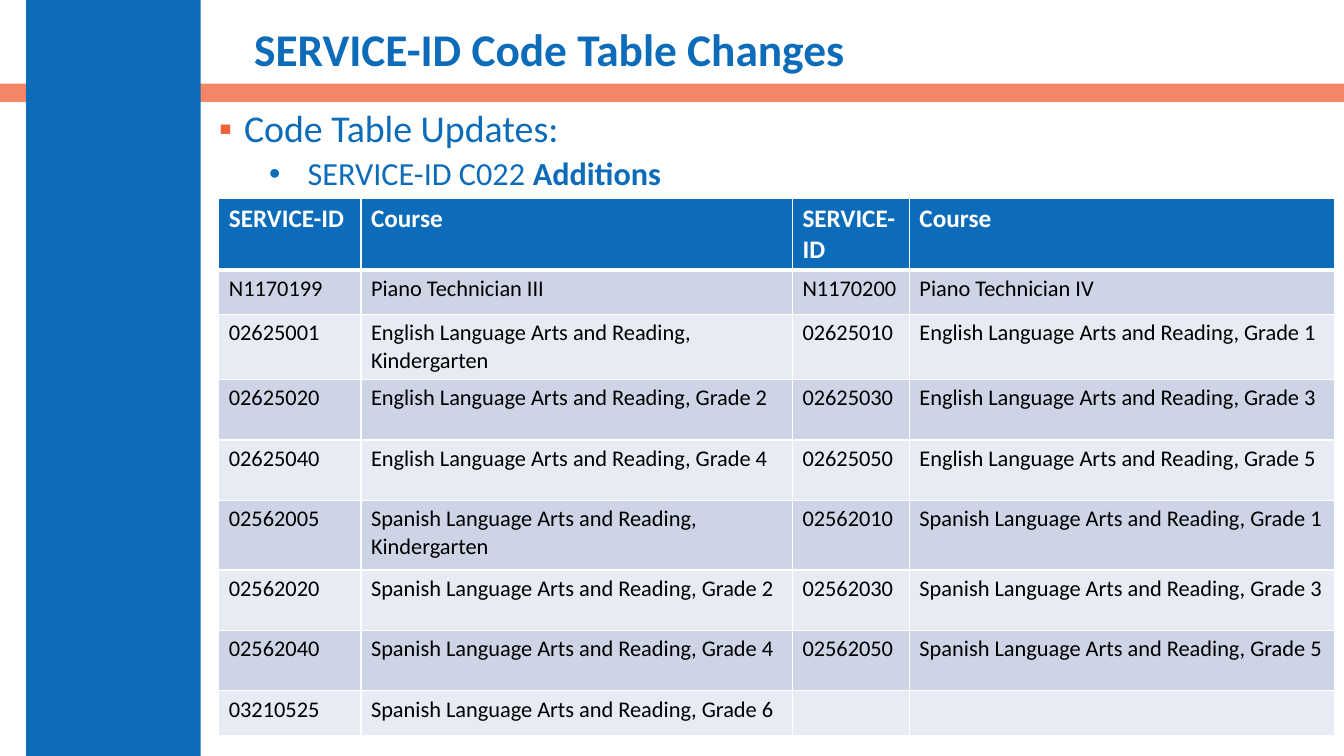
from lxml import etree
from pptx import Presentation
from pptx.dml.color import RGBColor
from pptx.enum.shapes import MSO_SHAPE
from pptx.enum.text import MSO_ANCHOR, MSO_AUTO_SIZE, PP_ALIGN
from pptx.oxml.ns import qn
from pptx.util import Inches, Pt

RECT = MSO_SHAPE.RECTANGLE
MIDDLE = MSO_ANCHOR.MIDDLE
NO_FIT = MSO_AUTO_SIZE.NONE
LEFT = PP_ALIGN.LEFT
FONT = "Calibri"
COLORS = {"blue": "0D6CB9", "orange": "F16038", "white": "FFFFFF",
          "black": "000000", "dark_row": "CCD4E6", "light_row": "E7EBF3"}
W, H = 13.33, 7.5


def style(r, size, color, bold=False):
    r.font.name = FONT
    r.font.size = Pt(size)
    r.font.bold = bold
    r.font.color.rgb = RGBColor.from_string(COLORS[color])


def place(sp, left, top, width, height):
    sp.left, sp.top = Inches(left), Inches(top)
    sp.width, sp.height = Inches(width), Inches(height)


prs = Presentation()
prs.slide_width, prs.slide_height = Inches(W), Inches(H)
s = prs.slides.add_slide(prs.slide_layouts[1])

bars = [("orange", 76, (0, 0.83, W, 0.18)), ("blue", 100, (0.26, 0, 1.73, H))]
for color, opacity, box in bars:
    sp = s.shapes.add_shape(RECT, *[Inches(v) for v in box])
    sp.shadow.inherit = False
    sp.line.fill.background()
    sp.fill.solid()
    sp.fill.fore_color.rgb = RGBColor.from_string(COLORS[color])
    if opacity < 100:
        srgb = sp._element.spPr.find(".//" + qn("a:srgbClr"))
        etree.SubElement(srgb, qn("a:alpha"), val=str(opacity * 1000))

title = s.shapes.title
place(title, 2.42, 0.22, 10.41, 0.59)
tf = title.text_frame
tf.text = "SERVICE-ID Code Table Changes"
tf.auto_size = NO_FIT
tf.vertical_anchor = MIDDLE
p = tf.paragraphs[0]
p.alignment = LEFT
p.line_spacing = 0.9
style(p.runs[0], 32.4, "blue", True)

body = s.placeholders[1]
place(body, 2.07, 1.04, 9.83, 4.76)
tf = body.text_frame
tf.auto_size = NO_FIT
bullets = [
    (0, 27, 0, 0.25, 0.25, "▪", "orange", [("Code Table Updates:", False)]),
    (1, 23, 5, 0.88, 0.38, "•", "blue",
     [("SERVICE-ID C022 ", False), ("Additions", True)]),
]
for level, size, before, margin, hang, char, color, parts in bullets:
    p = tf.add_paragraph() if level else tf.paragraphs[0]
    p.level = level
    p.line_spacing = 0.9
    p.space_before = Pt(before)
    pPr = p._p.get_or_add_pPr()
    pPr.set("marL", str(Inches(margin)))
    pPr.set("indent", str(-Inches(hang)))
    buClr = etree.SubElement(pPr, qn("a:buClr"))
    etree.SubElement(buClr, qn("a:srgbClr"), val=COLORS[color])
    etree.SubElement(pPr, qn("a:buFont"), typeface="Arial")
    etree.SubElement(pPr, qn("a:buChar"), char=char)
    for text, bold in parts:
        r = p.add_run()
        r.text = text
        style(r, size, "blue", bold)

ela = "English Language Arts and Reading, "
sla = "Spanish Language Arts and Reading, "
rows = [
    ("SERVICE-ID", "Course", "SERVICE-ID", "Course"),
    ("N1170199", "Piano Technician III", "N1170200", "Piano Technician IV"),
    ("02625001", ela + "Kindergarten", "02625010", ela + "Grade 1"),
    ("02625020", ela + "Grade 2", "02625030", ela + "Grade 3"),
    ("02625040", ela + "Grade 4", "02625050", ela + "Grade 5"),
    ("02562005", sla + "Kindergarten", "02562010", sla + "Grade 1"),
    ("02562020", sla + "Grade 2", "02562030", sla + "Grade 3"),
    ("02562040", sla + "Grade 4", "02562050", sla + "Grade 5"),
    ("03210525", sla + "Grade 6", "", ""),
]
col_widths = [1.41, 4.28, 1.16, 4.22]
row_heights = [0.66, 0.44, 0.6, 0.6, 0.6, 0.69, 0.6, 0.6, 0.44]
table = s.shapes.add_table(
    len(rows), len(col_widths), Inches(2.17), Inches(1.97),
    Inches(sum(col_widths)), Inches(sum(row_heights))).table
for col, width in zip(table.columns, col_widths):
    col.width = Inches(width)

for i, (row, height) in enumerate(zip(rows, row_heights)):
    table.rows[i].height = Inches(height)
    fill = "blue" if i == 0 else "dark_row" if i % 2 else "light_row"
    for j, text in enumerate(row):
        cell = table.cell(i, j)
        tcPr = cell._tc.get_or_add_tcPr()
        for side in ("lnL", "lnR", "lnT", "lnB"):
            heavy = (side, i) in (("lnB", 0), ("lnT", 1))
            ln = etree.SubElement(tcPr, qn("a:" + side), w=str(Pt(3 if heavy else 1)))
            line_fill = etree.SubElement(ln, qn("a:solidFill"))
            etree.SubElement(line_fill, qn("a:srgbClr"), val=COLORS["white"])
        cell.fill.solid()
        cell.fill.fore_color.rgb = RGBColor.from_string(COLORS[fill])
        if text:
            cell.text_frame.text = text
            r = cell.text_frame.paragraphs[0].runs[0]
            if i == 0:
                style(r, 18, "white", True)
            else:
                style(r, 16, "black")

prs.save("out.pptx")
